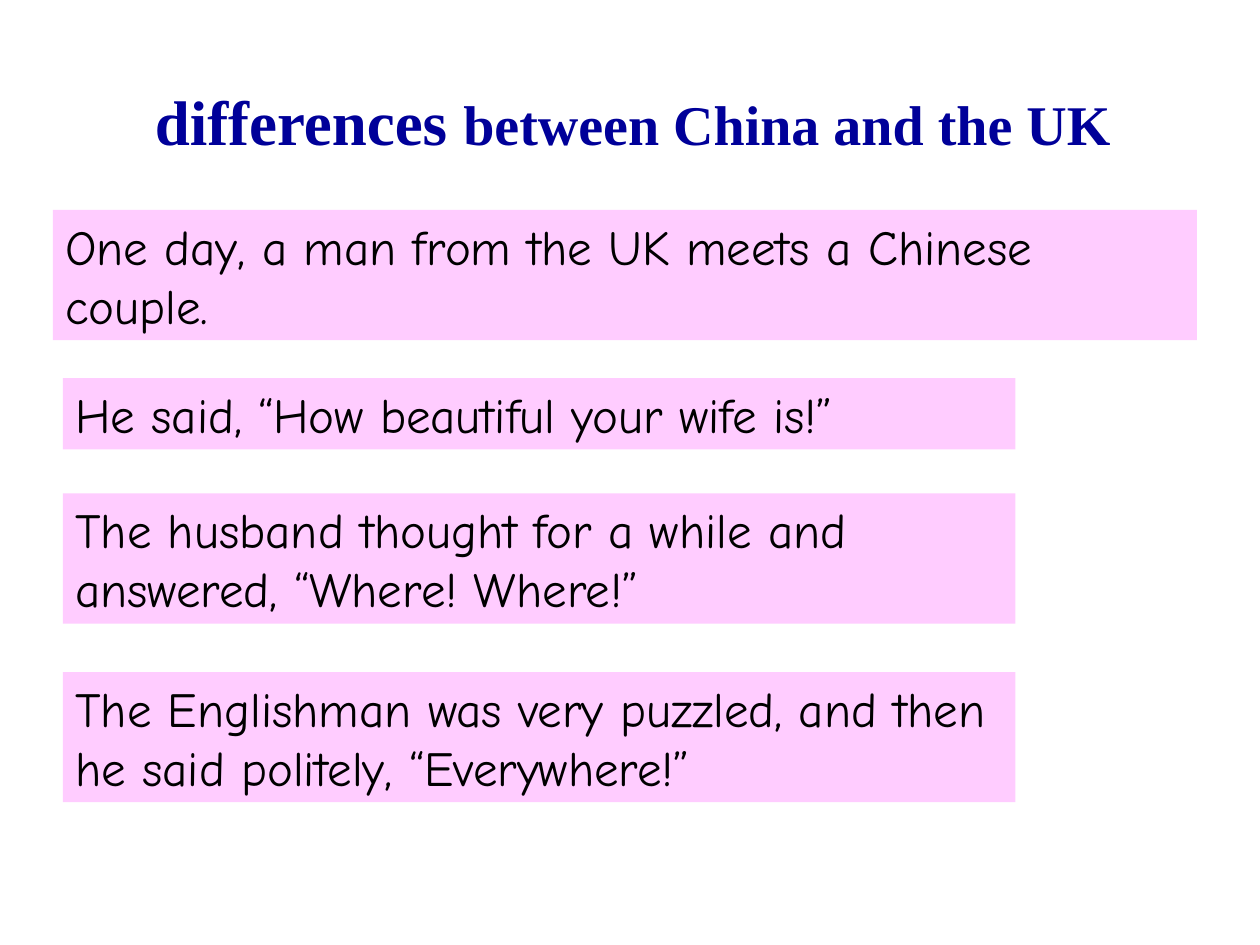
import pptx
import pptx.dml.color
import pptx.enum.shapes
import pptx.enum.text
import pptx.util

PINK = pptx.dml.color.RGBColor(0xFF, 0xCC, 0xFF)
NAVY = pptx.dml.color.RGBColor(0x00, 0x00, 0x99)
BLACK = pptx.dml.color.RGBColor(0x00, 0x00, 0x00)

presentation = pptx.Presentation()
presentation.slide_width = pptx.util.Inches(10)
presentation.slide_height = pptx.util.Inches(7.5)
slide = presentation.slides.add_slide(presentation.slide_layouts[6])

# Grid: 100 columns of 0.1 inch, 90 rows of a twelfth of an inch
COLUMN = presentation.slide_width / 100
ROW = presentation.slide_height / 90


def place(left, top, width, height):
    return (round(left * COLUMN), round(top * ROW),
            round(width * COLUMN), round(height * ROW))


def add_run(paragraph, text, font_name, size, color, bold=False):
    run = paragraph.add_run()
    run.text = text
    run.font.name = font_name
    run.font.size = pptx.util.Pt(size)
    run.font.bold = bold
    run.font.color.rgb = color


# Story panels: left, top, width, number of text lines, sentence
ONE_LINE, NEXT_LINE = 6.8, 5.6
panels = [
    (4.2, 20, 90.8, 2, "One day, a man from the UK meets a Chinese couple."),
    (5, 36, 75.6, 1, "He said, “How beautiful your wife is!”"),
    (5, 47, 75.6, 2, "The husband thought for a while and answered, “Where! Where!”"),
    (5, 64, 75.6, 2, "The Englishman was very puzzled, and then he said politely, “Everywhere!”"),
]
for left, top, width, lines, sentence in panels:
    height = ONE_LINE + (lines - 1) * NEXT_LINE
    panel = slide.shapes.add_shape(
        pptx.enum.shapes.MSO_SHAPE.RECTANGLE, *place(left, top, width, height))
    panel.shadow.inherit = False
    panel.fill.solid()
    panel.fill.fore_color.rgb = PINK
    panel.line.fill.background()
    frame = panel.text_frame
    frame.word_wrap = True
    frame.auto_size = pptx.enum.text.MSO_AUTO_SIZE.SHAPE_TO_FIT_TEXT
    frame.vertical_anchor = pptx.enum.text.MSO_ANCHOR.TOP
    paragraph = frame.paragraphs[0]
    paragraph.alignment = pptx.enum.text.PP_ALIGN.LEFT
    add_run(paragraph, sentence, "Comic Neue", 28, BLACK)

# Title
title = slide.shapes.add_textbox(*place(5.8, 4, 90, 15))
title.text_frame.word_wrap = True
title.text_frame.vertical_anchor = pptx.enum.text.MSO_ANCHOR.MIDDLE
paragraph = title.text_frame.paragraphs[0]
paragraph.alignment = pptx.enum.text.PP_ALIGN.CENTER
for text, size in (("differences ", 36), ("between China and the UK ", 32)):
    add_run(paragraph, text, "Times New Roman", size, NAVY, bold=True)

presentation.save("out.pptx")
